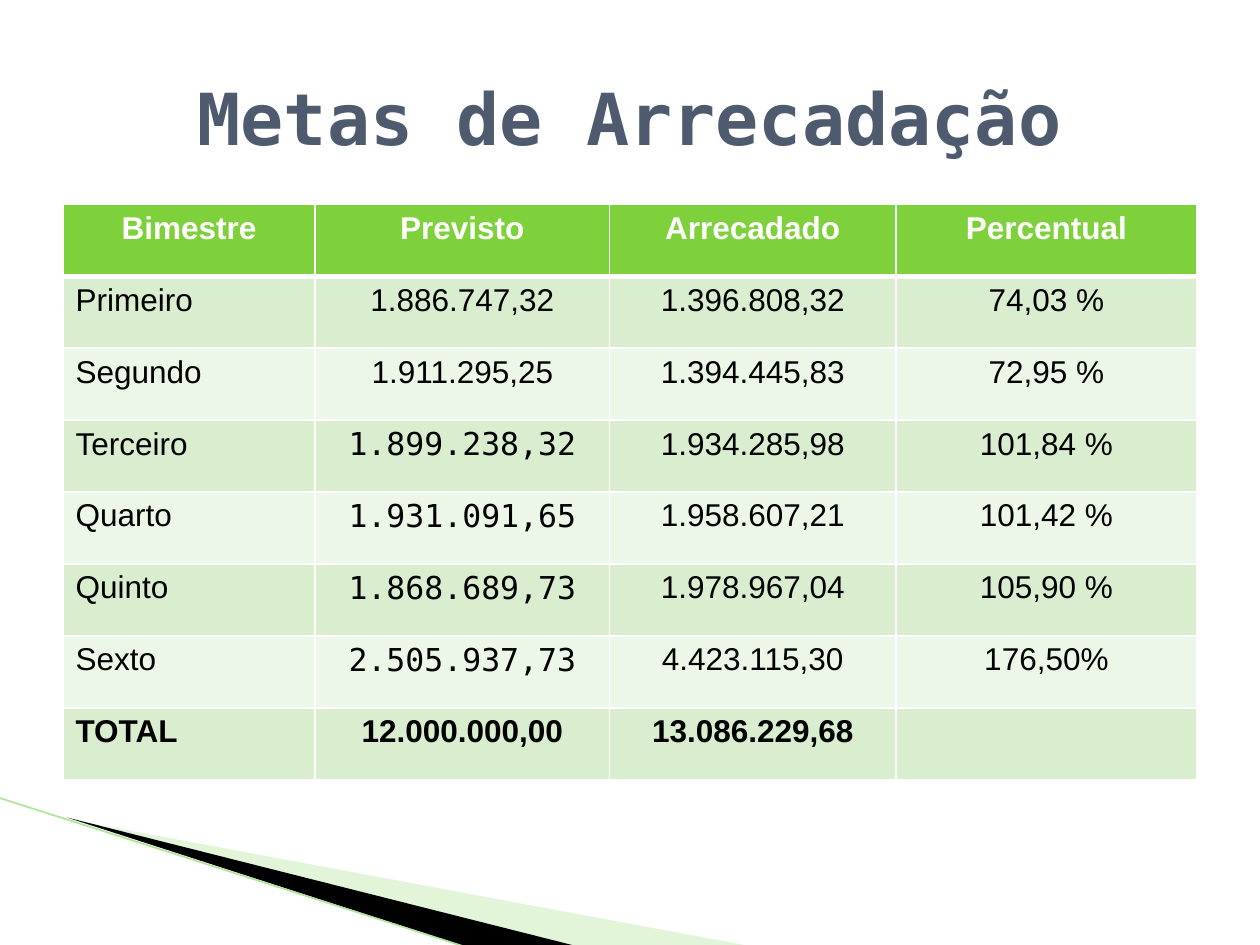
from pptx import Presentation
from pptx.dml.color import RGBColor
from pptx.enum.shapes import MSO_CONNECTOR
from pptx.enum.text import MSO_ANCHOR, PP_ALIGN
from pptx.oxml import parse_xml
from pptx.oxml.ns import nsdecls
from pptx.oxml.xmlchemy import OxmlElement
from pptx.util import Cm, Pt

SANS, MONO = "Arial", "DejaVu Sans Mono"
HEADER = ["Bimestre", "Previsto", "Arrecadado", "Percentual"]
BIMESTRES = [
    ["Primeiro", "1.886.747,32", "1.396.808,32", "74,03 %"],
    ["Segundo", "1.911.295,25", "1.394.445,83", "72,95 %"],
    ["Terceiro", "1.899.238,32", "1.934.285,98", "101,84 %"],
    ["Quarto", "1.931.091,65", "1.958.607,21", "101,42 %"],
    ["Quinto", "1.868.689,73", "1.978.967,04", "105,90 %"],
    ["Sexto", "2.505.937,73", "4.423.115,30", "176,50%"],
]
TOTAL = ["TOTAL", "12.000.000,00", "13.086.229,68", ""]
COL_WIDTHS = [5.08, 5.94, 5.77, 6.07]
ROW_HEIGHT = 1.45


def rgb(color):
    """Turn a hex string into a colour."""
    return RGBColor.from_string(color)


def write(tf, text, size=18, font=SANS, color="000000", bold=False, align=PP_ALIGN.LEFT):
    """Write one formatted line into a text frame."""
    p = tf.paragraphs[0]
    p.alignment = align
    p.font.size = Pt(size)
    if text:
        r = p.add_run()
        r.text = text
        r.font.name, r.font.size, r.font.bold = font, Pt(size), bold
        r.font.color.rgb = rgb(color)


def add_wedge(s, points, color, opacity=100):
    """Draw a filled polygon through points given in centimetres."""
    start, *rest = [(Cm(x), Cm(y)) for x, y in points]
    builder = s.shapes.build_freeform(*start)
    builder.add_line_segments(rest, close=True)
    sp = builder.convert_to_shape()
    sp.shadow.inherit = False
    sp.line.fill.background()
    sp.fill.solid()
    sp.fill.fore_color.rgb = rgb(color)
    if opacity < 100:
        alpha = OxmlElement("a:alpha")
        alpha.set("val", str(opacity * 1000))
        sp.fill._xPr.find(".//" + "{*}srgbClr").append(alpha)


def add_line(s, x1, y1, x2, y2, color, width):
    """Draw a straight line without shadow."""
    line = s.shapes.add_connector(MSO_CONNECTOR.STRAIGHT, Cm(x1), Cm(y1), Cm(x2), Cm(y2))
    line.line.color.rgb = rgb(color)
    line.line.width = Pt(width)
    line._element.spPr.append(OxmlElement("a:effectLst"))


def set_borders(cell, color, **widths):
    """Set cell borders, with widths in points keyed by side."""
    tcPr = cell._tc.get_or_add_tcPr()
    for i, (side, width) in enumerate(widths.items()):
        tcPr.insert(i, parse_xml(
            f'<a:ln{side} {nsdecls("a")} w="{Pt(width)}"><a:solidFill>'
            f'<a:srgbClr val="{color}"/></a:solidFill></a:ln{side}>'))


def add_title(s, text):
    """Place and format the title placeholder."""
    sp = s.shapes.title
    sp.left, sp.top, sp.width, sp.height = Cm(1.27), Cm(0.76), Cm(22.86), Cm(3.18)
    sp.text_frame.vertical_anchor = MSO_ANCHOR.MIDDLE
    write(sp.text_frame, text, size=41, font=MONO, color="4E5B6F", bold=True,
          align=PP_ALIGN.CENTER)


def add_revenue_table(s):
    """Add the table of expected and collected revenue."""
    rows = [HEADER, *BIMESTRES, TOTAL]
    table = s.shapes.add_table(len(rows), len(HEADER), Cm(1.27), Cm(4.12),
                               Cm(sum(COL_WIDTHS)), Cm(ROW_HEIGHT * len(rows))).table
    for col, width in zip(table.columns, COL_WIDTHS):
        col.width = Cm(width)
    for i, row in enumerate(rows):
        table.rows[i].height = Cm(ROW_HEIGHT)
        head = i == 0
        fill = "7FD13B" if head else "D8EECE" if i % 2 else "ECF7E8"
        for j, text in enumerate(row):
            cell = table.cell(i, j)
            cell.fill.solid()
            cell.fill.fore_color.rgb = rgb(fill)
            set_borders(cell, "FFFFFF", L=1, R=1, T=3 if i == 1 else 1, B=3 if head else 1)
            write(cell.text_frame, text,
                  font=MONO if j == 1 and 3 <= i <= 6 else SANS,
                  color="FFFFFF" if head else "000000",
                  bold=row in (HEADER, TOTAL),
                  align=PP_ALIGN.CENTER if head or j else PP_ALIGN.LEFT)


def main():
    """Build the slide and save it."""
    prs = Presentation()
    prs.slide_width, prs.slide_height = Cm(25.4), Cm(19.05)
    s = prs.slides.add_slide(prs.slide_layouts[5])
    add_wedge(s, [(1.4, 16.52), (15.11, 19.07), (11.58, 19.07)], "B8E7A1", opacity=40)
    add_wedge(s, [(1.35, 16.48), (11.61, 19.07), (9.45, 19.1)], "000000")
    add_line(s, -0.03, 16.08, 9.42, 19.1, "B1E399", 0.95)
    add_revenue_table(s)
    add_title(s, "Metas de Arrecadação")
    prs.save("out.pptx")


if __name__ == "__main__":
    main()
